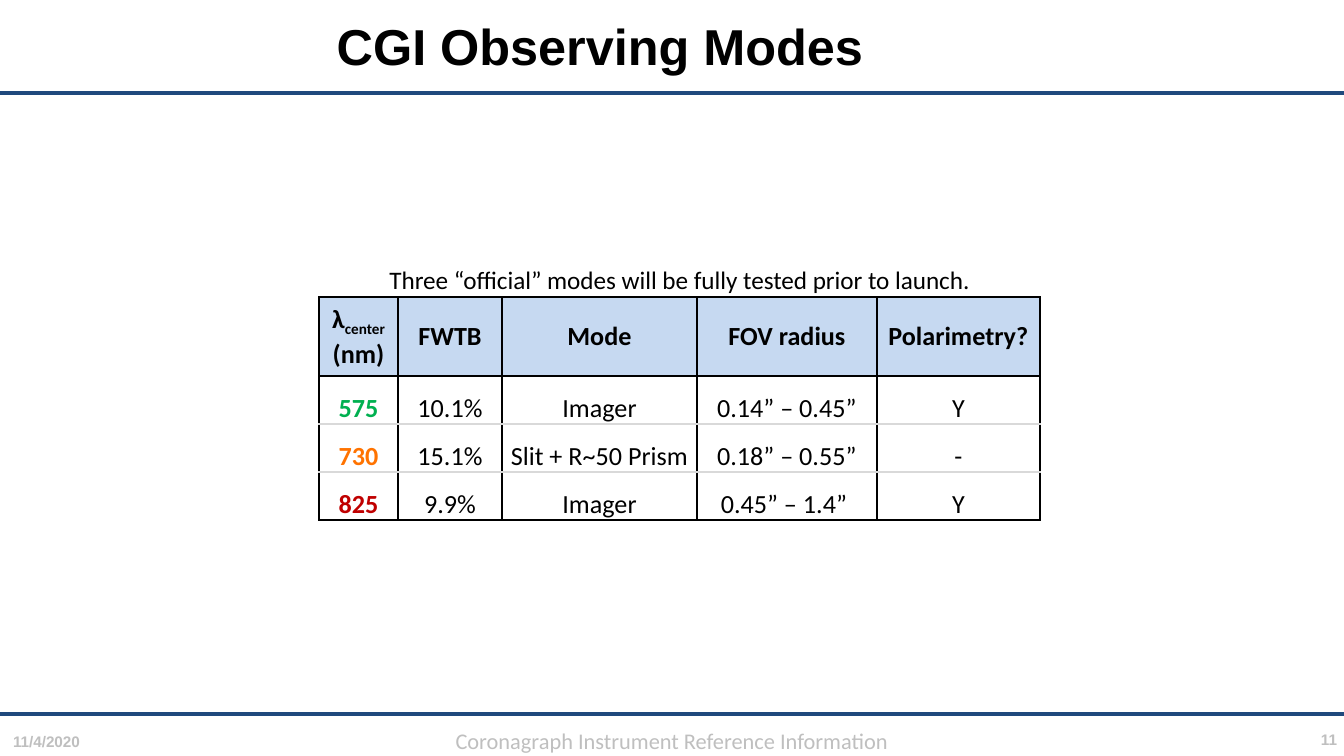
from lxml.etree import SubElement
from pptx import Presentation
from pptx.dml.color import RGBColor
from pptx.enum.shapes import MSO_CONNECTOR
from pptx.enum.text import MSO_ANCHOR, PP_ALIGN
from pptx.oxml.ns import qn
from pptx.util import Emu, Pt

SCALE = 914400 / 134.4
WIDTH, HEIGHT = 1344, 756
COLORS = {
    "ink": "000000", "rule": "1F497D", "footer": "BFBFBF", "header": "C6D9F1",
    "divider": "D9D9D9", "green": "00B050", "orange": "FF7300", "red": "C00000",
}
COLUMNS = [79, 104, 195, 180, 163]
ROWS = [79, 48, 48, 48]
HEADER = [[("λ", 0), ("center", -25000), (" (nm)", 0)],
          "FWTB", "Mode", "FOV radius", "Polarimetry?"]
MODES = [
    ("green", ["575", "10.1%", "Imager", "0.14” – 0.45”", "Y"]),
    ("orange", ["730", "15.1%", "Slit + R~50 Prism", "0.18” – 0.55”", "-"]),
    ("red", ["825", "9.9%", "Imager", "0.45” – 1.4” ", "Y"]),
]


def px(length):
    """Turn px into EMU."""
    return Emu(round(length * SCALE))


def rgb(name):
    """Look up a colour by name."""
    return RGBColor.from_string(COLORS[name])


def style(paragraph, size, color="ink", bold=False, font="Calibri", align=PP_ALIGN.CENTER):
    """Align a paragraph and format its runs."""
    paragraph.alignment = align
    for run in paragraph.runs:
        run.font.name, run.font.size, run.font.bold = font, Pt(size), bold
        run.font.color.rgb = rgb(color)


def set_margins(target, left, top, right, bottom):
    """Set the inner margins of a text frame or cell."""
    target.margin_left, target.margin_top = px(left), px(top)
    target.margin_right, target.margin_bottom = px(right), px(bottom)


def add_text(slide, box, text, size, margins=(13, 7, 13, 7), **look):
    """Add a one-paragraph text box."""
    frame = slide.shapes.add_textbox(*map(px, box)).text_frame
    frame.word_wrap = True
    set_margins(frame, *margins)
    frame.text = text
    style(frame.paragraphs[0], size, **look)


def add_rule(slide, y):
    """Draw a full-width horizontal rule."""
    rule = slide.shapes.add_connector(MSO_CONNECTOR.STRAIGHT, 0, px(y), px(WIDTH), px(y))
    rule.line.color.rgb = rgb("rule")
    rule.line.width = Pt(2)
    SubElement(rule._element.spPr, qn("a:effectLst"))


def add_title(slide, box):
    """Place and format the title, with the rule below it."""
    title = slide.shapes.title
    title.left, title.top, title.width, title.height = map(px, box)
    frame = title.text_frame
    frame.text = "CGI Observing Modes"
    frame.vertical_anchor = MSO_ANCHOR.MIDDLE
    style(frame.paragraphs[0], 27, bold=True, font="Arial")
    add_rule(slide, 93)


def add_footer(slide, box):
    """Add the rule, date, document name and page number."""
    left, top, width, height = box
    small = {"color": "footer", "bold": True, "font": "Arial"}
    add_rule(slide, top)
    add_text(slide, (left + width - 129, top + 12, 129, 26), "11", 8.2,
             margins=(7, 4, 7, 4), align=PP_ALIGN.RIGHT, **small)
    add_text(slide, (left, top + 11, 281, 32), "11/4/2020", 8.2,
             align=PP_ALIGN.LEFT, **small)
    add_text(slide, (left, top + 6, width, 40),
             "Coronagraph Instrument Reference Information", 12, color="footer")


def set_borders(cell, top, bottom):
    """Give a cell black sides and the named top and bottom colours."""
    sides = {"lnL": "ink", "lnR": "ink", "lnT": top, "lnB": bottom}
    properties = cell._tc.get_or_add_tcPr()
    for side, color in sides.items():
        line = SubElement(properties, qn(f"a:{side}"), w=str(Pt(1)))
        fill = SubElement(line, qn("a:solidFill"))
        SubElement(fill, qn("a:srgbClr"), val=COLORS[color])


def fill_cell(cell, content, anchor, color="ink", bold=False):
    """Write plain text or (text, baseline) parts into a cell."""
    set_margins(cell, 1, 1, 1, 0)
    cell.vertical_anchor = anchor
    paragraph = cell.text_frame.paragraphs[0]
    parts = [(content, 0)] if isinstance(content, str) else content
    for text, baseline in parts:
        run = paragraph.add_run()
        run.text = text
        if baseline:
            run._r.get_or_add_rPr().set("baseline", str(baseline))
    style(paragraph, 14, color, bold)


def add_modes(slide, box):
    """Add the caption and the table of observing modes."""
    left, top, width, height = box
    table = slide.shapes.add_table(len(ROWS), len(COLUMNS), *map(px, box)).table
    for column, size in zip(table.columns, COLUMNS):
        column.width = px(size)
    for row, size in zip(table.rows, ROWS):
        row.height = px(size)
    for index, content in enumerate(HEADER):
        cell = table.cell(0, index)
        set_borders(cell, "ink", "ink")
        cell.fill.solid()
        cell.fill.fore_color.rgb = rgb("header")
        fill_cell(cell, content, MSO_ANCHOR.MIDDLE, bold=True)
    for number, (accent, values) in enumerate(MODES, 1):
        above = "ink" if number == 1 else "divider"
        below = "ink" if number == len(MODES) else "divider"
        for index, value in enumerate(values):
            cell = table.cell(number, index)
            set_borders(cell, above, below)
            cell.fill.background()
            fill_cell(cell, value, MSO_ANCHOR.BOTTOM,
                      "ink" if index else accent, bold=index == 0)
    add_text(slide, (left, top - 40, width, 44),
             "Three “official” modes will be fully tested prior to launch.", 13.5)


def main():
    """Build and save the slide."""
    deck = Presentation()
    deck.slide_width, deck.slide_height = px(WIDTH), px(HEIGHT)
    slide = deck.slides.add_slide(deck.slide_layouts[5])
    add_footer(slide, (0, 714, WIDTH, 42))
    add_title(slide, (202, 8, 796, 75))
    add_modes(slide, (319, 297, sum(COLUMNS), sum(ROWS)))
    deck.save("out.pptx")


if __name__ == "__main__":
    main()
